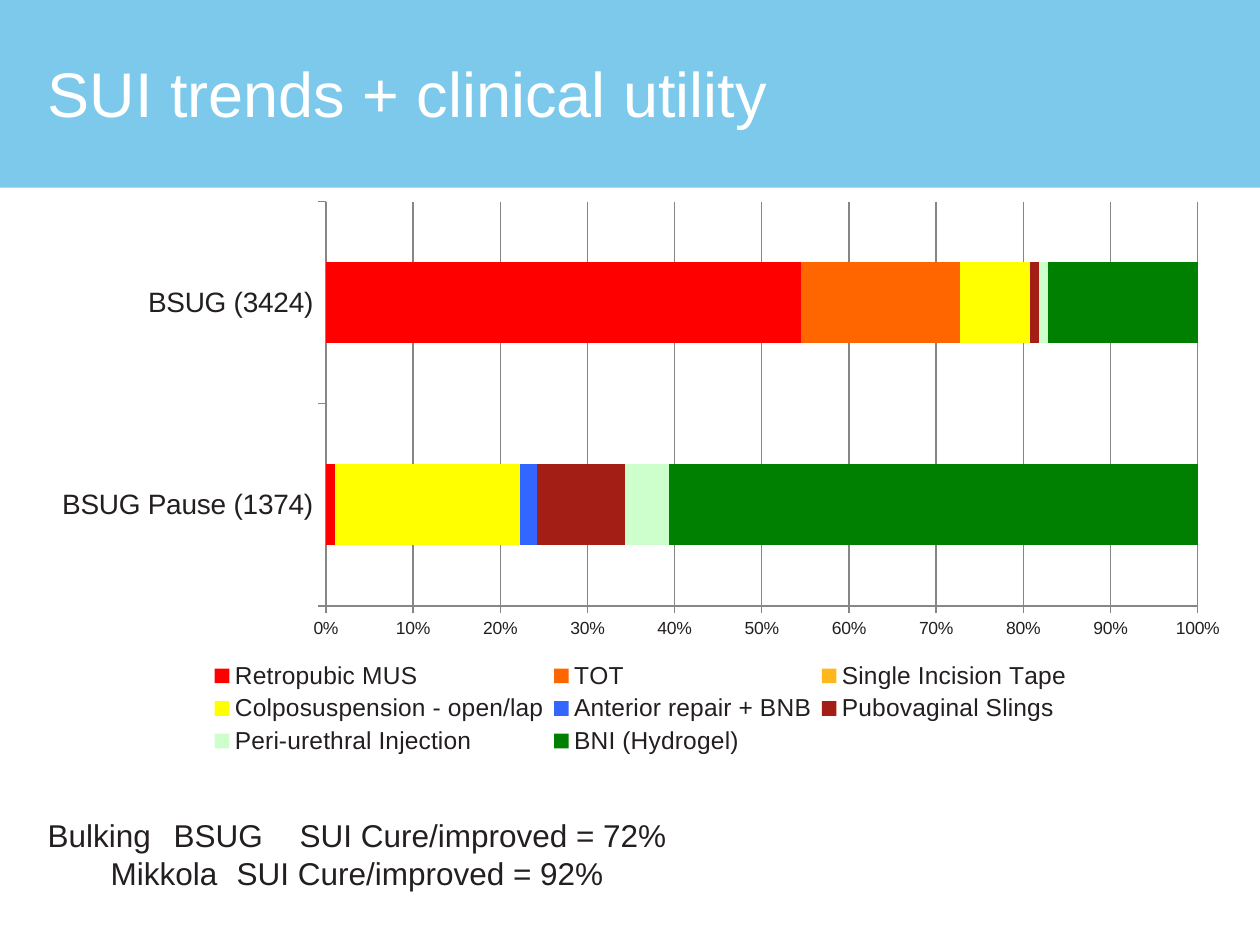
"""Build the slide on stress urinary incontinence surgery trends."""
from dataclasses import dataclass

from lxml import etree
from pptx import Presentation
from pptx.chart.data import CategoryChartData
from pptx.dml.color import RGBColor
from pptx.enum.chart import XL_CHART_TYPE, XL_LEGEND_POSITION, XL_TICK_MARK
from pptx.enum.shapes import MSO_SHAPE
from pptx.enum.text import MSO_ANCHOR
from pptx.oxml.ns import qn
from pptx.util import Inches, Pt

BAR_STACKED_100 = XL_CHART_TYPE.BAR_STACKED_100
LEGEND_BOTTOM = XL_LEGEND_POSITION.BOTTOM
TICK_OUTSIDE = XL_TICK_MARK.OUTSIDE
RECTANGLE = MSO_SHAPE.RECTANGLE
TOP, MIDDLE = MSO_ANCHOR.TOP, MSO_ANCHOR.MIDDLE

COHORTS = ["BSUG Pause (1374)", "BSUG (3424)"]
PROCEDURES = [
    ("Retropubic MUS", (1, 54), "FF0000"),
    ("TOT", (0, 18), "FF6600"),
    ("Single Incision Tape", (0, 0), "FFB81C"),
    ("Colposuspension - open/lap", (21, 8), "FFFF00"),
    ("Anterior repair + BNB", (2, 0), "3366FF"),
    ("Pubovaginal Slings", (10, 1), "A31F15"),
    ("Peri-urethral Injection", (5, 1), "CCFFCC"),
    ("BNI (Hydrogel)", (60, 17), "008000"),
]
BULKING_RESULTS = [
    "Bulking \tBSUG\tSUI Cure/improved = 72%",
    "\tMikkola \tSUI Cure/improved = 92%",
]


@dataclass(frozen=True)
class Theme:
    font: str = "Arial"
    banner: str = "7DC9EB"
    title: str = "FFFFFF"
    ink: str = "231F20"
    axis: str = "868686"
    title_size: int = 36
    body_size: int = 18
    category_size: int = 16
    legend_size: int = 14
    scale_size: int = 10


class SlideBuilder:
    def __init__(self, slide, theme):
        self.slide = slide
        self.theme = theme

    def style(self, font, size, color):
        font.name = self.theme.font
        font.size = Pt(size)
        font.color.rgb = RGBColor.from_string(color)

    def banner(self, box):
        band = self.slide.shapes.add_shape(RECTANGLE, *map(Inches, box))
        band.shadow.inherit = False
        band.fill.solid()
        band.fill.fore_color.rgb = RGBColor.from_string(self.theme.banner)
        band.line.fill.background()

    def text(self, box, lines, size, color, anchor=TOP, bottom=0.05, spacing=1.0):
        frame = self.slide.shapes.add_textbox(*map(Inches, box)).text_frame
        frame.word_wrap = True
        frame.vertical_anchor = anchor
        frame.margin_bottom = Inches(bottom)
        frame.text = "\n".join(lines)
        for paragraph in frame.paragraphs:
            paragraph.line_spacing = spacing
            for run in paragraph.runs:
                self.style(run.font, size, color)

    def place(self, part, index, x, y, w, h, inner=False):
        for old_layout in part.findall(qn("c:layout")):
            part.remove(old_layout)
        layout = etree.Element(qn("c:layout"))
        manual = etree.SubElement(layout, qn("c:manualLayout"))
        settings = [("layoutTarget", "inner")] if inner else []
        settings += [("xMode", "edge"), ("yMode", "edge")]
        settings += [("x", x), ("y", y), ("w", w), ("h", h)]
        for tag, value in settings:
            etree.SubElement(manual, qn(f"c:{tag}")).set("val", str(value))
        part.insert(index, layout)

    def stacked_chart(self, box, categories, series_rows):
        theme = self.theme
        data = CategoryChartData()
        data.categories = categories
        for name, values, _ in series_rows:
            data.add_series(name, values)
        chart = self.slide.shapes.add_chart(
            BAR_STACKED_100, *map(Inches, box), data).chart
        self.style(chart.font, theme.scale_size, theme.ink)
        chart.has_title = False

        plot = chart.plots[0]
        plot.gap_width, plot.overlap = 150, 100
        plot.vary_by_categories = False
        for series, (_, _, color) in zip(plot.series, series_rows):
            series.format.fill.solid()
            series.format.fill.fore_color.rgb = RGBColor.from_string(color)

        scale = chart.value_axis
        scale.has_major_gridlines = True
        scale.tick_labels.number_format = "0%"
        scale.tick_labels.number_format_is_linked = False
        axis_color = RGBColor.from_string(theme.axis)
        scale.major_gridlines.format.line.color.rgb = axis_color
        sizes = (theme.scale_size, theme.category_size)
        for axis, size in zip((scale, chart.category_axis), sizes):
            axis.major_tick_mark = TICK_OUTSIDE
            axis.format.line.color.rgb = axis_color
            self.style(axis.tick_labels.font, size, theme.ink)

        chart.has_legend = True
        chart.legend.position = LEGEND_BOTTOM
        chart.legend.include_in_layout = False
        self.style(chart.legend.font, theme.legend_size, theme.ink)
        plot_area = chart.element.find(".//" + qn("c:plotArea"))
        legend = chart.element.find(".//" + qn("c:legend"))
        self.place(plot_area, 0, 0.24, 0.02, 0.72, 0.71, inner=True)
        self.place(legend, 1, 0.14, 0.82, 0.72, 0.18)


def main():
    deck = Presentation()
    deck.slide_width, deck.slide_height = Inches(10), Inches(7.5)
    theme = Theme()
    builder = SlideBuilder(deck.slides.add_slide(deck.slide_layouts[6]), theme)
    builder.banner((0, 0, 10, 1.49))
    builder.text((0.28, 0, 7.01, 1.49), ["SUI trends + clinical utility"],
                 theme.title_size, theme.title, MIDDLE, bottom=0, spacing=0.9)
    builder.stacked_chart((0.28, 1.51, 9.61, 4.52), COHORTS, PROCEDURES)
    builder.text((0.28, 6.43, 9.61, 0.71), BULKING_RESULTS,
                 theme.body_size, theme.ink)
    deck.save("out.pptx")


if __name__ == "__main__":
    main()
